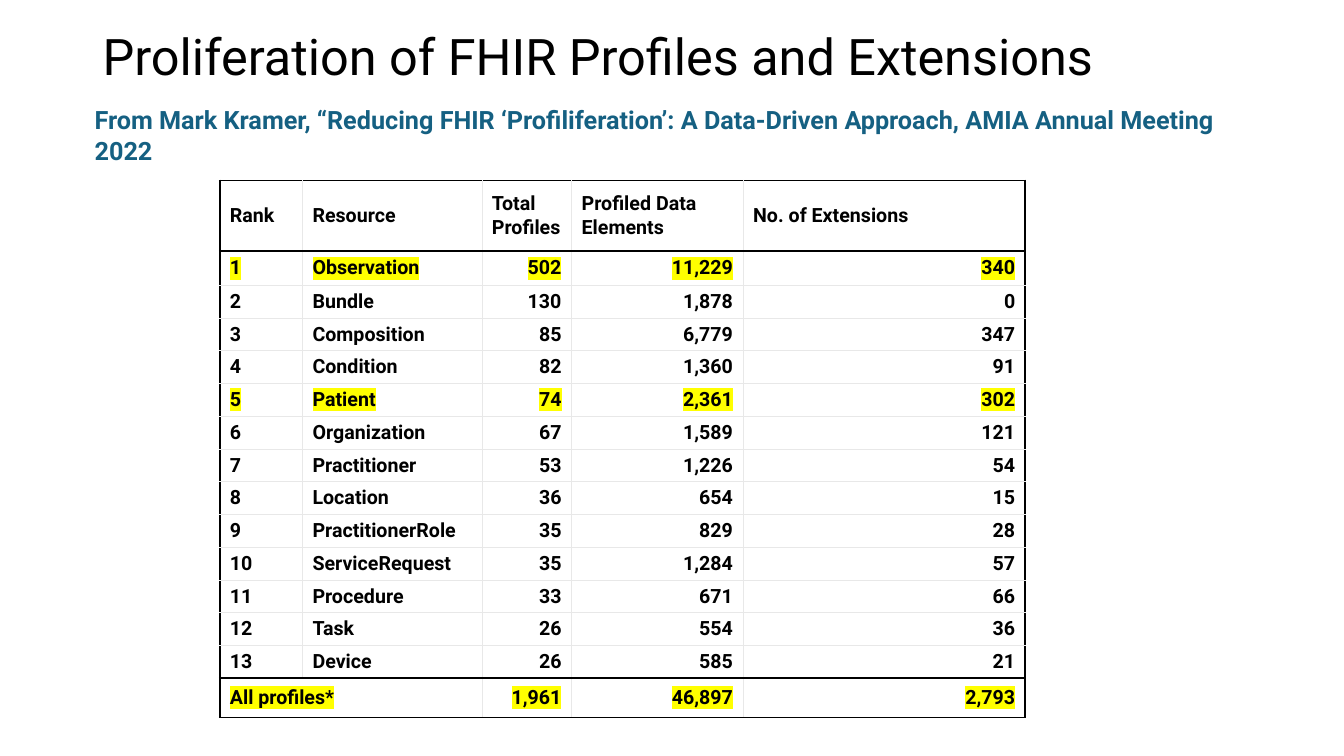
from pptx import Presentation
from pptx import util as u
from pptx.dml import color
from pptx.enum import text
from pptx.oxml import ns
from lxml import etree

theme = {
    "face": "Roboto",
    "black": "000000", "white": "FFFFFF", "teal": "156082",
    "grid": "E8E8E8", "mark": "FFFF00",
    "title": 36, "sub": 18, "body": 14,
}


def write(para, words, size, ink, bold=False, mark=None):
    run = para.add_run()
    run.text = words
    look = {"name": theme["face"], "size": u.Pt(size), "bold": bold}
    for key, val in look.items():
        setattr(run.font, key, val)
    run.font.color.rgb = color.RGBColor.from_string(ink)
    if mark:
        glow = etree.Element(ns.qn("a:highlight"))
        etree.SubElement(glow, ns.qn("a:srgbClr"), val=mark)
        run._r.rPr.find(ns.qn("a:latin")).addprevious(glow)


def edge(cell, side, heavy):
    ink, width = (theme["black"], 1.5) if heavy else (theme["grid"], 0.5)
    line = etree.SubElement(cell._tc.get_or_add_tcPr(), ns.qn("a:ln" + side),
                            w=str(u.Pt(width)))
    fill = etree.SubElement(line, ns.qn("a:solidFill"))
    etree.SubElement(fill, ns.qn("a:srgbClr"), val=ink)


deck = Presentation()
deck.slide_width, deck.slide_height = u.Inches(13.33), u.Inches(7.5)
slide = deck.slides.add_slide(deck.slide_layouts[6])

# Title and source line
heads = [
    ("Proliferation of FHIR Profiles and Extensions",
     (0.92, 0.19, 11.5, 0.79), "title", "black", False,
     text.MSO_ANCHOR.MIDDLE, 0.9),
    ("From Mark Kramer, “Reducing FHIR ‘Profiliferation’: A Data-Driven "
     "Approach, AMIA Annual Meeting 2022",
     (0.84, 0.99, 11.89, 0.4), "sub", "teal", True,
     text.MSO_ANCHOR.TOP, 1.0),
]
for words, area, size, ink, bold, anchor, space in heads:
    frame = slide.shapes.add_textbox(*map(u.Inches, area)).text_frame
    frame.word_wrap = True
    frame.vertical_anchor = anchor
    para = frame.paragraphs[0]
    para.line_spacing = space
    write(para, words, theme[size], theme[ink], bold)

# Table contents
rows = [
    ("Rank", "Resource", "Total Profiles", "Profiled Data Elements",
     "No. of Extensions"),
    ("1", "Observation", "502", "11,229", "340"),
    ("2", "Bundle", "130", "1,878", "0"),
    ("3", "Composition", "85", "6,779", "347"),
    ("4", "Condition", "82", "1,360", "91"),
    ("5", "Patient", "74", "2,361", "302"),
    ("6", "Organization", "67", "1,589", "121"),
    ("7", "Practitioner", "53", "1,226", "54"),
    ("8", "Location", "36", "654", "15"),
    ("9", "PractitionerRole", "35", "829", "28"),
    ("10", "ServiceRequest", "35", "1,284", "57"),
    ("11", "Procedure", "33", "671", "66"),
    ("12", "Task", "26", "554", "36"),
    ("13", "Device", "26", "585", "21"),
    ("All profiles*", "", "1,961", "46,897", "2,793"),
]
marked = {"1", "5", "All profiles*"}
widths = [0.82, 1.78, 0.89, 1.7, 2.8]
tall, first, total = 5.33, 0.7, 0.39
top = 0.34
step = (tall - first - top - total) / (len(rows) - 3)
heights = [first, top] + [step] * (len(rows) - 3) + [total]
end, last = len(rows) - 1, len(widths) - 1

# Table frame
table = slide.shapes.add_table(
    len(rows), len(widths), u.Inches(2.18), u.Inches(1.79),
    u.Inches(sum(widths)), u.Inches(tall)).table
table.first_row = table.horz_banding = False
for col, width in zip(table.columns, widths):
    col.width = u.Inches(width)
for row, height in zip(table.rows, heights):
    row.height = u.Inches(height)
table.cell(end, 0).merge(table.cell(end, 1))

# Cells: heavy outline, heavy rules under the header and above the total
for r, row in enumerate(rows):
    for c, words in enumerate(row):
        cell = table.cell(r, c)
        heavy = {"L": c == 0, "R": c == last,
                 "T": r in (0, 1, end), "B": r in (0, end - 1, end)}
        for side, thick in heavy.items():
            edge(cell, side, thick)
        cell.fill.solid()
        cell.fill.fore_color.rgb = color.RGBColor.from_string(theme["white"])
        cell.vertical_anchor = text.MSO_ANCHOR.MIDDLE
        if 0 < r < end:
            cell.margin_top = cell.margin_bottom = 0
        para = cell.text_frame.paragraphs[0]
        if r and c > 1:
            para.alignment = text.PP_ALIGN.RIGHT
        if words:
            write(para, words, theme["body"], theme["black"], True,
                  theme["mark"] if row[0] in marked else None)

deck.save("out.pptx")
